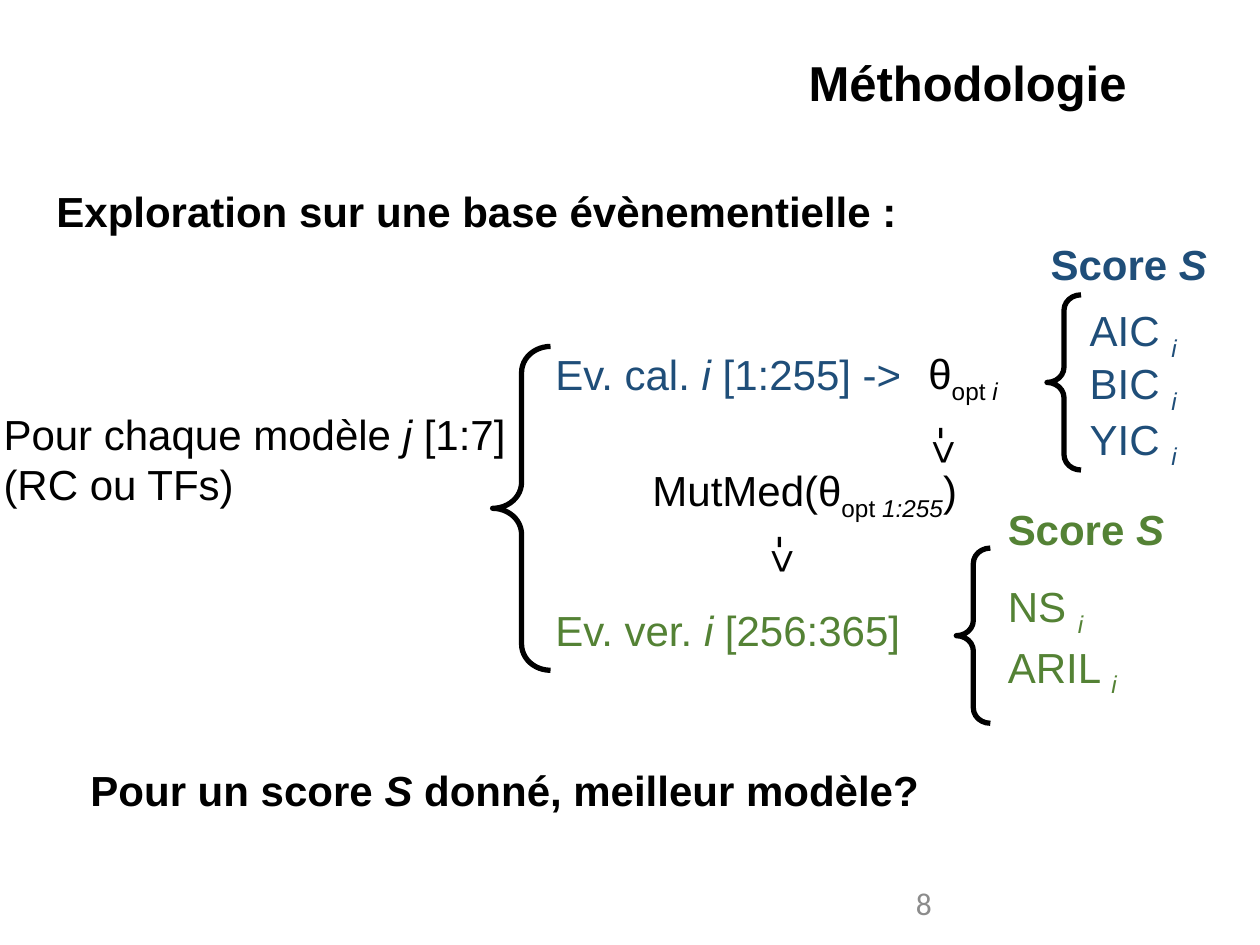
from pptx import Presentation
from pptx import util as u
from pptx.dml.color import RGBColor
from pptx.enum import shapes, text

COLUMNS, ROWS = 100, 75
CELL = u.Inches(0.1)
BLACK, BLUE, GREEN, GREY = "000000", "1F4E79", "548235", "8C8C8C"
ITALIC = {"italic": True}
SUB = {"sub": True}
SUB_ITALIC = {"italic": True, "sub": True}


def color(hex_value):
    return RGBColor.from_string(hex_value)


def cells(*lengths):
    return [round(length * CELL) for length in lengths]


def apply(target, values):
    for name, value in values.items():
        setattr(target, name, value)


def add_run(paragraph, wording, ink, style, sub=False, **extra):
    run = paragraph.add_run()
    run.text = wording
    apply(run.font, {"name": "Arial", "size": u.Pt(24), **style, **extra})
    run.font.color.rgb = color(ink)
    if sub:
        run.font._element.set("baseline", "-25000")


def add_label(slide, place, lines, ink=BLACK, wrap=False, rotation=0, **style):
    label = slide.shapes.add_textbox(*cells(*place))
    label.rotation = rotation
    frame = label.text_frame
    apply(frame, {"word_wrap": wrap, "auto_size": text.MSO_AUTO_SIZE.SHAPE_TO_FIT_TEXT})
    for index, line in enumerate(lines):
        paragraph = frame.add_paragraph() if index else frame.paragraphs[0]
        for wording, change in line:
            add_run(paragraph, wording, ink, style, **change)


def add_brace(slide, place):
    brace = slide.shapes.add_shape(shapes.MSO_SHAPE.LEFT_BRACE, *cells(*place))
    brace.shadow.inherit = False
    brace.fill.background()
    brace.line.color.rgb = color(BLACK)
    brace.line.width = u.Pt(3)
    for index, share in enumerate((0.45, 0.5)):
        brace.adjustments[index] = share


def add_score(slide, left, top, ink):
    add_label(slide, (left, top, 14.6, 5), [[("Score ", {}), ("S", ITALIC)]], ink, bold=True)


def add_criteria(slide, left, ink, criteria):
    for name, top, width in criteria:
        add_label(slide, (left, top, width, 5), [[(name + " ", {}), ("i", SUB_ITALIC)]], ink)


def add_headings(slide):
    add_label(slide, (63.2, 3.7, 27.6, 5.7), [[("Méthodologie", {})]], bold=True, size=u.Pt(28))
    add_label(slide, (3.5, 14.2, 83.6, 5),
              [[("Exploration sur une base évènementielle :", {})]], wrap=True, bold=True)
    add_label(slide, (6.2, 60.2, 68.3, 5),
              [[("Pour un score ", {}), ("S ", ITALIC), ("donné, meilleur modèle?", {})]], bold=True)


def add_method(slide):
    add_label(slide, (-0.7, 31.9, 42.3, 9.1),
              [[("Pour chaque modèle ", {}), ("j ", ITALIC), ("[1:7]", {})], [("(RC ou TFs)", {})]])
    add_label(slide, (43.1, 27.2, 32.5, 5),
              [[("Ev. cal. ", {}), ("i", ITALIC), (" [1:255] ->", {})]], BLUE)
    add_label(slide, (72.7, 27.1, 8.4, 5), [[("θ", {}), ("opt ", SUB), ("i", SUB_ITALIC)]])
    add_label(slide, (50.8, 36.4, 28, 5),
              [[("MutMed(θ", {}), ("opt ", SUB), ("1:255", SUB_ITALIC), (")", {})]])
    add_label(slide, (43.1, 47.5, 30.6, 5),
              [[("Ev. ver. ", {}), ("i", ITALIC), (" [256:365]", {})]], GREEN)
    for left, top in ((71.8, 33.7), (59, 42.3)):
        add_label(slide, (left, top, 6.6, 5), [[("->", {})]], wrap=True, rotation=90)


def main():
    deck = Presentation()
    apply(deck, {"slide_width": COLUMNS * CELL, "slide_height": ROWS * CELL})
    slide = deck.slides.add_slide(deck.slide_layouts[6])
    add_headings(slide)
    add_method(slide)
    for place in ((39.1, 27.5, 4.6, 25.7), (83.1, 23.4, 2.7, 13.9), (75.9, 43.5, 2.7, 13.9)):
        add_brace(slide, place)
    add_score(slide, 82.4, 18.4, BLUE)
    add_criteria(slide, 85.5, BLUE, [("AIC", 23.7, 9), ("BIC", 27.9, 9), ("YIC", 32.3, 9)])
    add_score(slide, 79, 39.5, GREEN)
    add_criteria(slide, 79, GREEN, [("NS", 45.6, 8.1), ("ARIL", 50.4, 10.8)])
    add_label(slide, (71.7, 69.7, 23.3, 4), [[("8", {})]], GREY, wrap=True,
              name="Calibri", size=u.Pt(18))
    deck.save("out.pptx")


if __name__ == "__main__":
    main()
